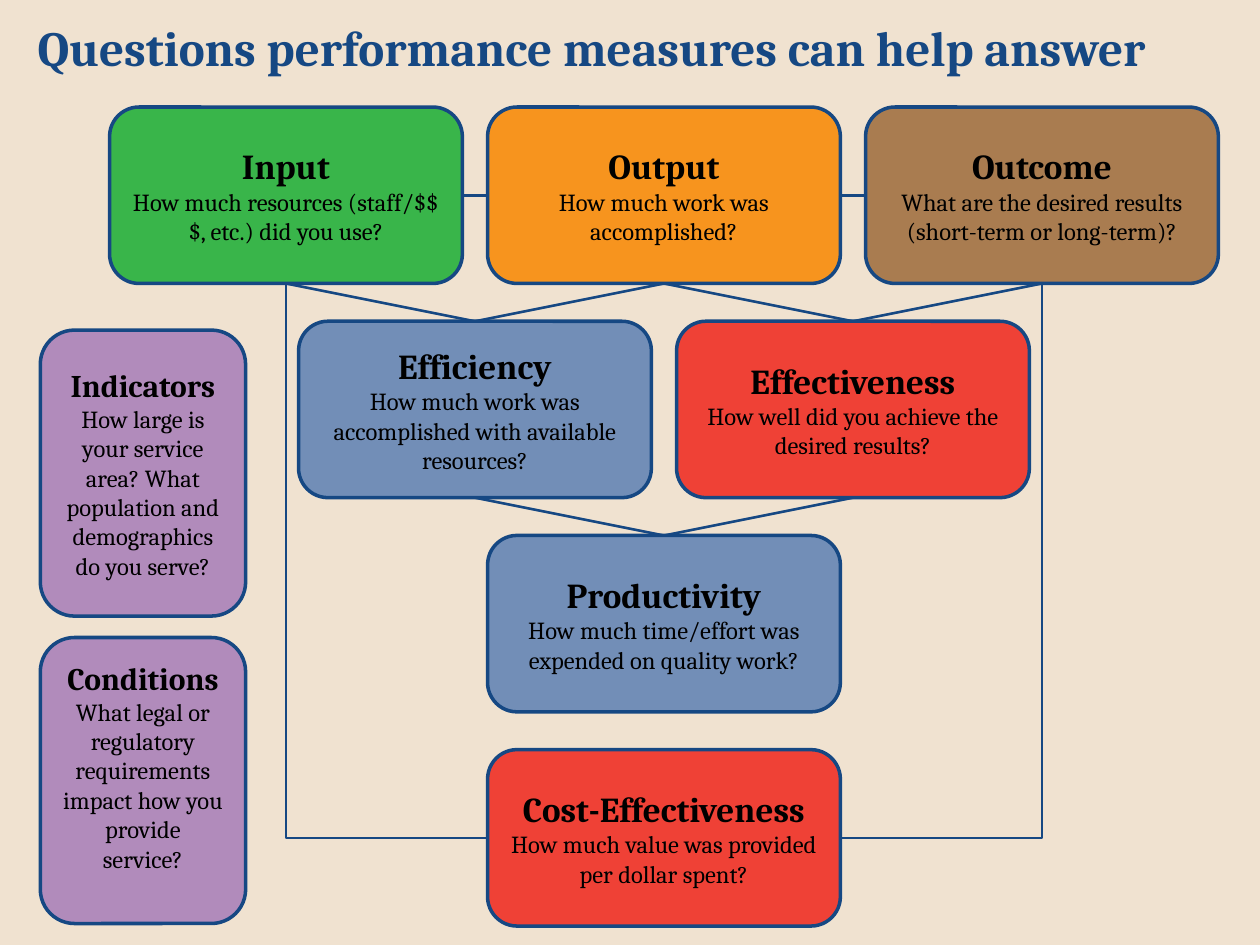
from lxml import etree
from pptx import Presentation, util as u
from pptx.dml.color import RGBColor
from pptx.enum import shapes, text
from pptx.oxml.ns import qn

NAVY, BLUE, RED, PURPLE = "164883", "728EB7", "EF4136", "B18BBB"
TOP, LEFT, BOTTOM, RIGHT = range(4)  # connection sites of a box


def rgb(value):
    return RGBColor.from_string(value)


def write(p, words, size, bold, color="000000"):
    r = p.add_run()
    r.text = words
    r.font.color.rgb = rgb(color)
    style = {"name": "Cambria", "size": u.Pt(size), "bold": bold}
    for key, value in style.items():
        setattr(r.font, key, value)


prs = Presentation()
prs.slide_width, prs.slide_height = u.Inches(10), u.Inches(7.5)
s = prs.slides.add_slide(prs.slide_layouts[6])
s.background.fill.solid()
s.background.fill.fore_color.rgb = rgb("F0E2D0")

# Title
tf = s.shapes.add_textbox(*map(u.Inches, (0.2, 0, 9.55, 0.75))).text_frame
tf.word_wrap = True
tf.vertical_anchor = text.MSO_ANCHOR.MIDDLE
write(tf.paragraphs[0], "Questions performance measures can help answer", 28, True, NAVY)

# Boxes: measures sit on a grid with half-column steps, context boxes at left
X0, Y0, STEP_X, STEP_Y = 0.87, 0.85, 1.5, 1.7
measures = [
    ("Input", "How much resources (staff/$$$, etc.) did you use?", "39B54A", 0, 0),
    ("Output", "How much work was accomplished?", "F7941E", 2, 0),
    ("Outcome", "What are the desired results (short-term or long-term)?", "A97C50", 4, 0),
    ("Efficiency", "How much work was accomplished with available resources?", BLUE, 1, 1),
    ("Productivity", "How much time/effort was expended on quality work?", BLUE, 2, 2),
    ("Effectiveness", "How well did you achieve the desired results?", RED, 3, 1),
    ("Cost-Effectiveness", "How much value was provided per dollar spent?", RED, 2, 3),
]
specs = [(name, question, fill, 20, (X0 + col * STEP_X, Y0 + row * STEP_Y, 2.8, 1.4))
         for name, question, fill, col, row in measures]
specs += [
    ("Indicators", "How large is your service area? What population and "
     "demographics do you serve?", PURPLE, 18, (0.32, 2.62, 1.63, 2.27)),
    ("Conditions", "What legal or regulatory requirements impact how you "
     "provide service?", PURPLE, 18, (0.32, 5.06, 1.63, 2.27)),
]
boxes = {}
for name, question, fill, size, place in specs:
    sp = s.shapes.add_shape(shapes.MSO_SHAPE.ROUNDED_RECTANGLE, *map(u.Inches, place))
    sp.shadow.inherit = False
    sp.fill.solid()
    sp.fill.fore_color.rgb = rgb(fill)
    sp.line.color.rgb = rgb(NAVY)
    sp.line.width = u.Pt(2)
    tf = sp.text_frame
    tf.word_wrap = True
    tf.vertical_anchor = text.MSO_ANCHOR.MIDDLE
    write(tf.paragraphs[0], name, size, True)
    write(tf.add_paragraph(), question, 14, False)
    for p in tf.paragraphs:
        p.alignment = text.PP_ALIGN.CENTER
    boxes[name] = sp
boxes["Conditions"].text_frame.margin_bottom = u.Inches(0.28)  # lifts the text

# Connectors; an elbow also has its unrotated frame and its rotation in degrees
links = [
    ("Input", BOTTOM, "Efficiency", TOP, None),
    ("Efficiency", TOP, "Output", BOTTOM, None),
    ("Output", BOTTOM, "Effectiveness", TOP, None),
    ("Effectiveness", TOP, "Outcome", BOTTOM, None),
    ("Efficiency", BOTTOM, "Productivity", TOP, None),
    ("Productivity", TOP, "Effectiveness", BOTTOM, None),
    ("Input", RIGHT, "Output", LEFT, None),
    ("Output", RIGHT, "Outcome", LEFT, None),
    ("Outcome", BOTTOM, "Cost-Effectiveness", RIGHT, ((5.27, 3.65, 4.4, 1.6), 90)),
    ("Cost-Effectiveness", LEFT, "Input", BOTTOM, ((2.27, 2.25, 1.6, 4.4), 180)),
]
for start, start_site, end, end_site, elbow in links:
    kind = shapes.MSO_CONNECTOR.ELBOW if elbow else shapes.MSO_CONNECTOR.STRAIGHT
    cx = s.shapes.add_connector(kind, 0, 0, 0, 0)
    cx.begin_connect(boxes[start], start_site)
    cx.end_connect(boxes[end], end_site)
    cx.line.color.rgb = rgb(NAVY)
    cx.line.width = u.Pt(1.5)
    props = cx._element.spPr
    if elbow:
        frame, degrees = elbow
        cx.left, cx.top, cx.width, cx.height = map(u.Inches, frame)
        xfrm = props.find(qn("a:xfrm"))
        for flip in ("flipH", "flipV"):
            xfrm.attrib.pop(flip, None)
        xfrm.set("rot", str(degrees * 60000))
        props.find(qn("a:prstGeom")).set("prst", "bentConnector2")
    etree.SubElement(props, qn("a:effectLst"))

prs.save("out.pptx")
